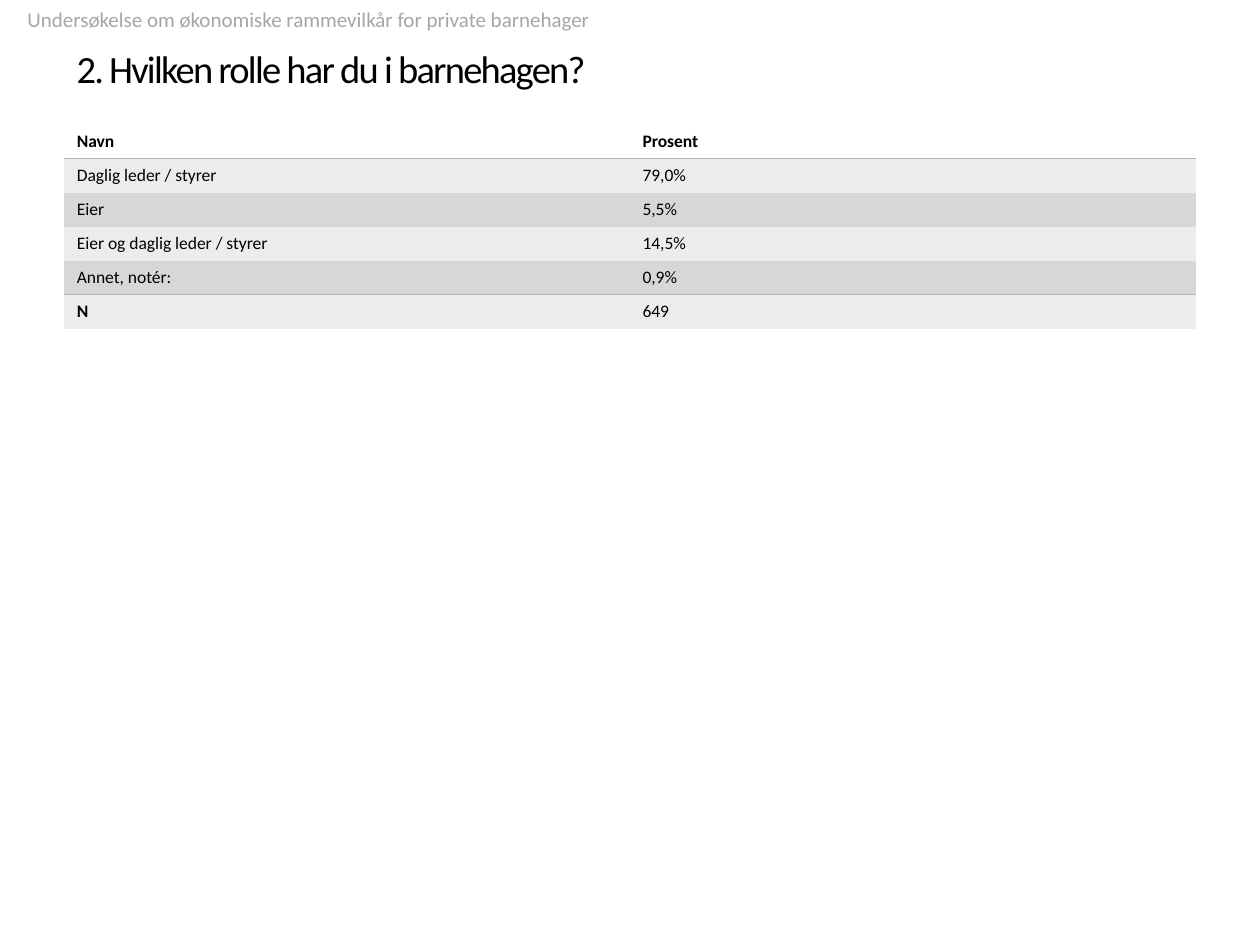
from pptx import Presentation
from pptx.dml.color import RGBColor as Rgb
from pptx.enum.text import MSO_ANCHOR as Anchor
from pptx.oxml.ns import qn
from pptx.util import Inches, Pt
from lxml.etree import SubElement


def write(frame, text, size=10, color="000000", bold=False, spacing=0, indent=0):
    paragraph = frame.paragraphs[0]
    if indent:
        paragraph._p.get_or_add_pPr().set("marL", str(Inches(indent)))
    run = paragraph.add_run()
    run.text = text
    run.font.name = "Calibri"
    run.font.size = Pt(size)
    run.font.bold = bold
    run.font.color.rgb = Rgb.from_string(color)
    if spacing:
        run._r.get_or_add_rPr().set("spc", str(spacing * 100))


def set_border(cell, edge, color=None):
    line = SubElement(cell._tc.get_or_add_tcPr(), qn(f"a:{edge}"), w=str(Pt(1)))
    if color:
        fill = SubElement(line, qn("a:solidFill"))
        SubElement(fill, qn("a:srgbClr"), val=color)
    else:
        SubElement(line, qn("a:noFill"))


deck = Presentation()
deck.slide_width = Inches(10)
deck.slide_height = Inches(7.5)
slide = deck.slides.add_slide(deck.slide_layouts[6])
margin = Inches(0.51)
row_height = Inches(0.27)

question = slide.shapes.add_textbox(margin, Inches(0.24), deck.slide_width * 9 // 10, Inches(0.6)).text_frame
question.word_wrap = True
question.vertical_anchor = Anchor.MIDDLE
write(question, "2. Hvilken rolle har du i barnehagen?", size=22, spacing=-1)

survey = slide.shapes.add_textbox(0, 0, deck.slide_width, Inches(0.25)).text_frame
survey.word_wrap = True
write(survey, "Undersøkelse om økonomiske rammevilkår for private barnehager",
      size=12, color="A6A6A6", indent=0.12)

answers = [
    ("Navn", "Prosent"),
    ("Daglig leder / styrer", "79,0%"),
    ("Eier", "5,5%"),
    ("Eier og daglig leder / styrer", "14,5%"),
    ("Annet, notér:", "0,9%"),
    ("N", "649"),
]
total_row = len(answers) - 1
ruled_edges = {(0, "lnB"), (1, "lnT"), (total_row - 1, "lnB"), (total_row, "lnT")}

roles = slide.shapes.add_table(len(answers), 2, margin, Inches(0.99),
                               deck.slide_width - 2 * margin, row_height * len(answers)).table
for row, answer in enumerate(answers):
    roles.rows[row].height = row_height
    band = "FFFFFF" if row == 0 else ("D7D7D8", "ECECEC")[row % 2]
    for column, text in enumerate(answer):
        cell = roles.cell(row, column)
        write(cell.text_frame, text, bold=row == 0 or text == "N")
        for edge in ("lnL", "lnR", "lnT", "lnB"):
            set_border(cell, edge, "B4B4B4" if (row, edge) in ruled_edges else None)
        cell.fill.solid()
        cell.fill.fore_color.rgb = Rgb.from_string(band)

deck.save("out.pptx")
